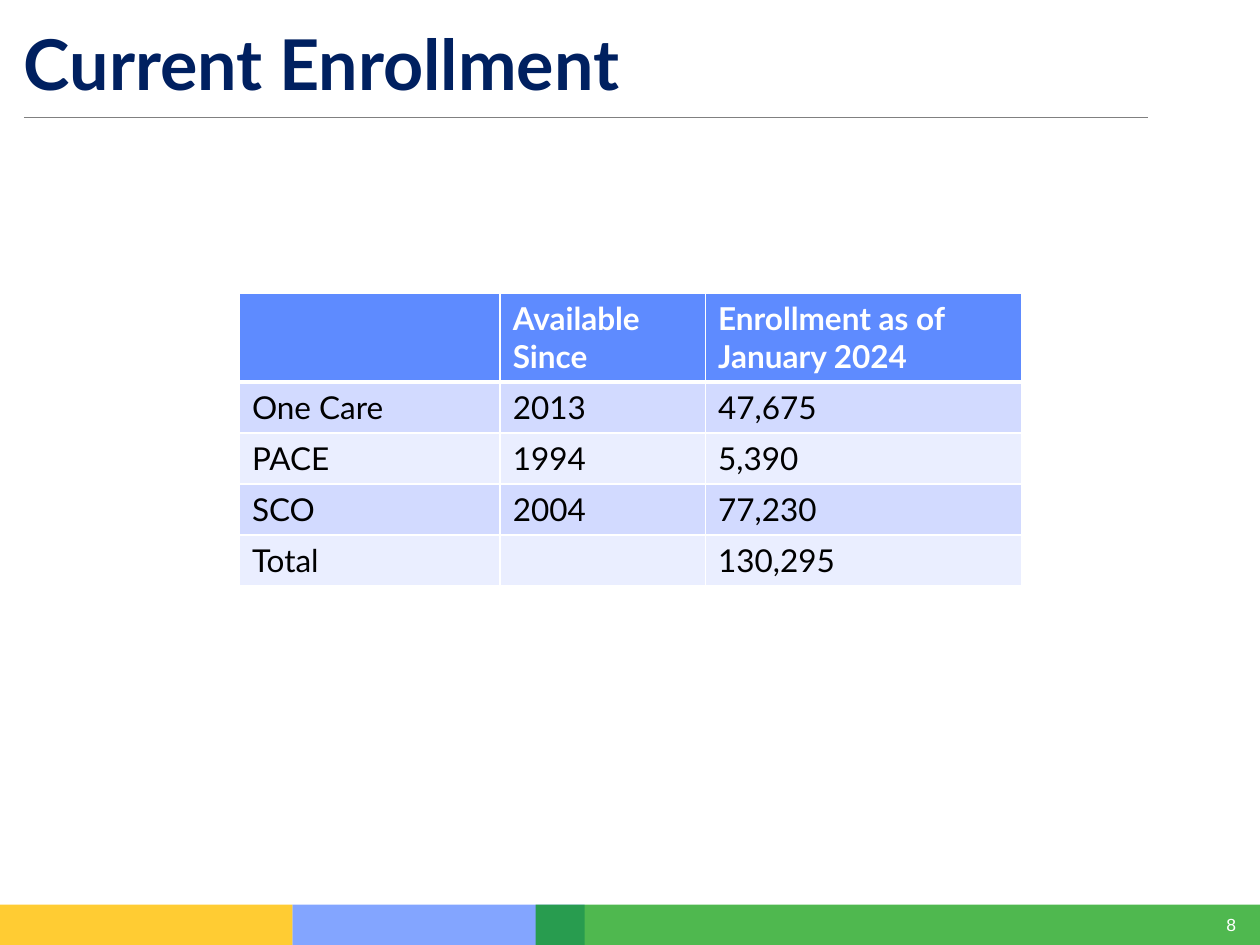
from lxml import etree
from pptx import Presentation
from pptx.dml.color import RGBColor
from pptx.enum.shapes import MSO_CONNECTOR, MSO_SHAPE
from pptx.enum.text import MSO_ANCHOR, PP_ALIGN
from pptx.oxml.ns import qn
from pptx.util import Inches, Pt

RECT = MSO_SHAPE.RECTANGLE
STRAIGHT = MSO_CONNECTOR.STRAIGHT
MIDDLE, TOP = MSO_ANCHOR.MIDDLE, MSO_ANCHOR.TOP
LEFT, RIGHT = PP_ALIGN.LEFT, PP_ALIGN.RIGHT

COLS, ROWS = 100, 75  # grid over the slide

TITLE = dict(name="Lato", size=Pt(40), bold=True, color="002060")
HEAD = dict(name="Lato", size=Pt(18), bold=True, color="FFFFFF")
BODY = dict(name="Lato", size=Pt(18), bold=False, color="000000")
NUMBER = dict(name="Arial", size=Pt(10), color="FFFFFF")

HEAD_FILL, BANDS = "5E8BFF", ("D2DAFF", "EAEEFF")

ENROLLMENT = [
    ("", "Available Since", "Enrollment as of January 2024"),
    ("One Care", "2013", "47,675"),
    ("PACE", "1994", "5,390"),
    ("SCO", "2004", "77,230"),
    ("Total", "", "130,295"),
]


def rgb(code):
    return RGBColor.from_string(code)


class Deck:
    def __init__(self):
        self.prs = Presentation()
        self.prs.slide_width, self.prs.slide_height = Inches(10), Inches(7.5)
        self.s = self.prs.slides.add_slide(self.prs.slide_layouts[6])

    def x(self, cols):
        return round(self.prs.slide_width * cols / COLS)

    def y(self, rows):
        return round(self.prs.slide_height * rows / ROWS)

    def box(self, left, top, width, height):
        return self.x(left), self.y(top), self.x(width), self.y(height)

    def style(self, font, fmt):
        for key, value in fmt.items():
            if key == "color":
                font.color.rgb = rgb(value)
            else:
                setattr(font, key, value)

    def bar(self, place, color, opacity):
        sp = self.s.shapes.add_shape(RECT, *self.box(*place))
        sp.shadow.inherit = False
        sp.line.fill.background()
        sp.fill.solid()
        sp.fill.fore_color.rgb = rgb(color)
        clr = sp.fill._xPr.find(".//" + qn("a:srgbClr"))
        etree.SubElement(clr, qn("a:alpha"), val=str(opacity * 1000))

    def text(self, place, words, fmt, align=LEFT, anchor=TOP, wrap=True):
        tf = self.s.shapes.add_textbox(*self.box(*place)).text_frame
        for side in ("left", "top", "right", "bottom"):
            setattr(tf, "margin_" + side, 0)
        tf.word_wrap, tf.vertical_anchor = wrap, anchor
        p = tf.paragraphs[0]
        p.alignment = align
        r = p.add_run()
        r.text = words
        self.style(r.font, fmt)

    def rule(self, x1, x2, row, color, width):
        ln = self.s.shapes.add_connector(
            STRAIGHT, self.x(x1), self.y(row), self.x(x2), self.y(row))
        ln.line.color.rgb, ln.line.width = rgb(color), Pt(width)
        etree.SubElement(ln._element.spPr, qn("a:effectLst"))

    def borders(self, cell, widths, color="FFFFFF"):
        tcPr = cell._tc.get_or_add_tcPr()
        for i, (side, width) in enumerate(zip("LRTB", widths)):
            ln = etree.Element(qn("a:ln" + side), w=str(Pt(width)))
            fill = etree.SubElement(ln, qn("a:solidFill"))
            etree.SubElement(fill, qn("a:srgbClr"), val=color)
            tcPr.insert(i, ln)

    def table(self, left, top, widths, heights, data):
        place = self.box(left, top, sum(widths), sum(heights))
        tbl = self.s.shapes.add_table(len(data), len(widths), *place).table
        for col, width in zip(tbl.columns, widths):
            col.width = self.x(width)
        for i, (row, height) in enumerate(zip(tbl.rows, heights)):
            row.height = self.y(height)
            for cell, words in zip(row.cells, data[i]):
                cell.text = words
                self.style(cell.text_frame.paragraphs[0].font, BODY if i else HEAD)
                cell.fill.solid()
                cell.fill.fore_color.rgb = rgb(BANDS[(i - 1) % 2] if i else HEAD_FILL)
                self.borders(cell, (1, 1, 3 if i == 1 else 1, 1 if i else 3))


def main():
    deck = Deck()

    # Footer band and slide number
    deck.bar((23.2, 71.8, 23.2, 3.2), "5E8BFF", 77)
    deck.bar((0, 71.8, 23.2, 3.2), "FFC000", 80)
    deck.bar((42.5, 71.8, 57.5, 3.2), "009900", 69)
    deck.text((96.3, 72.5, 1.8, 1.7), "8", NUMBER, RIGHT, MIDDLE, wrap=False)

    # Title and its rule
    deck.text((1.9, 1.6, 84.9, 6.7), "Current Enrollment", TITLE)

    # Enrollment by program
    deck.table(19, 23.3, (20.7, 16.3, 25.1), [6.9] + [4.05] * 4, ENROLLMENT)

    deck.rule(1.9, 91.1, 9.3, "808080", 0.75)
    deck.prs.save("out.pptx")


if __name__ == "__main__":
    main()
